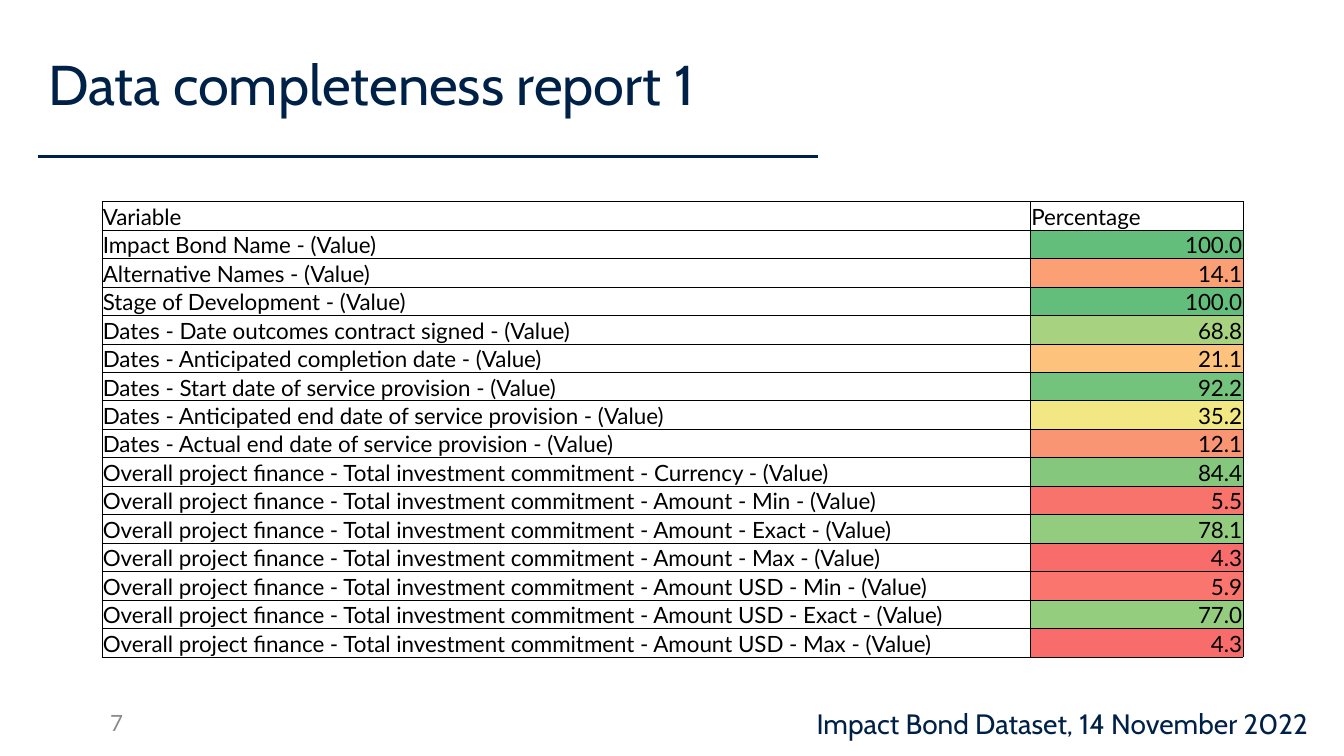
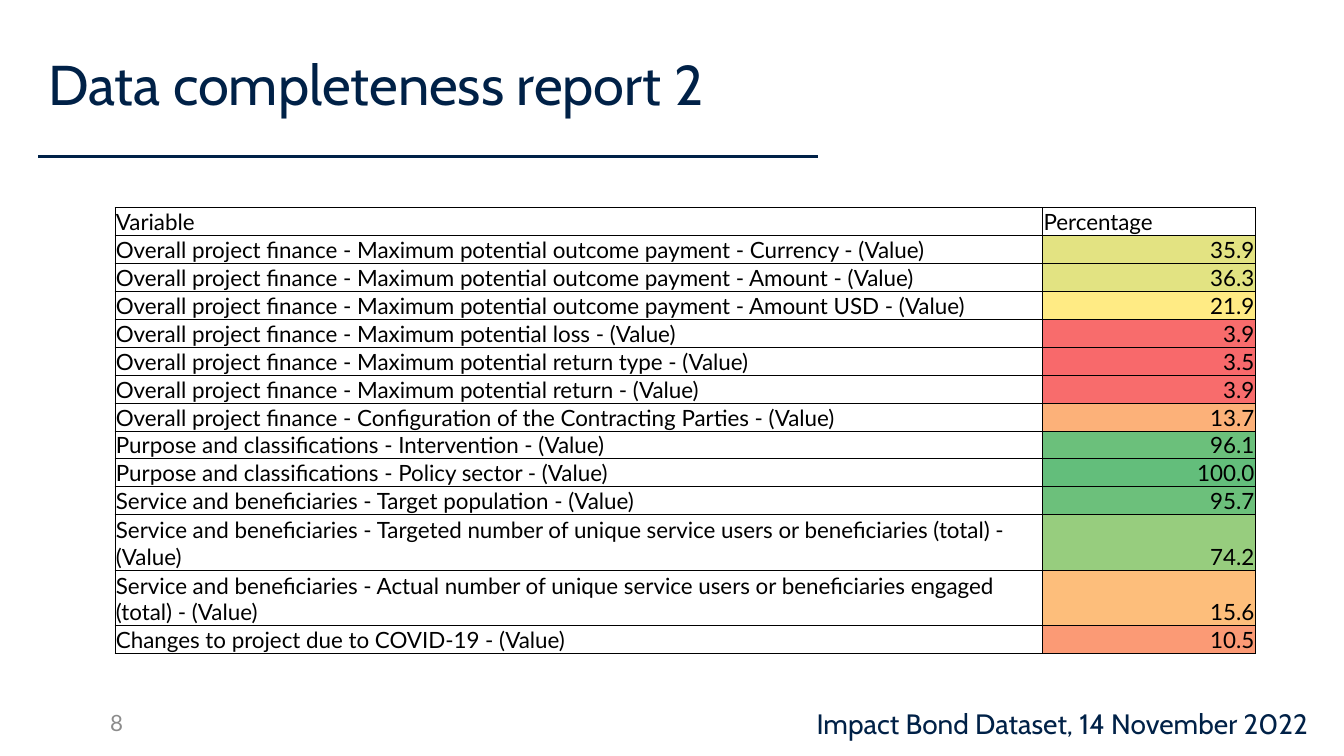
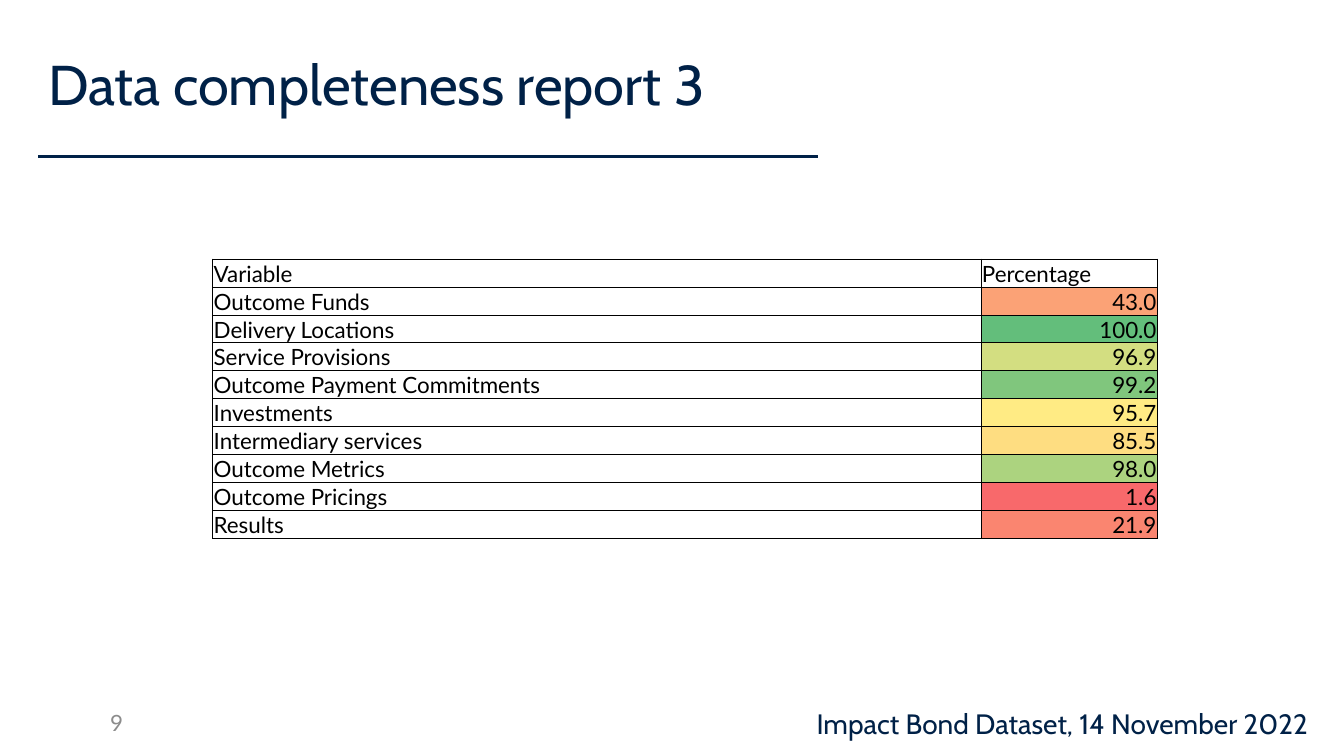
from dataclasses import dataclass

import lxml.etree
import pptx
import pptx.dml.color
import pptx.enum.shapes
import pptx.enum.text
import pptx.oxml.ns
import pptx.util

Inches = pptx.util.Inches
Pt = pptx.util.Pt
ALIGN = pptx.enum.text.PP_ALIGN
ANCHOR = pptx.enum.text.MSO_ANCHOR
qn = pptx.oxml.ns.qn

COLOURS = {
    "navy": "002147", "grey": "8C8C8C", "black": "000000",
    "low": "F8696B", "middle": "FFEB84", "high": "63BE7B",
}
HEADING_FONT = "Cabin"
BODY_FONT = "Lato"
FOOTER = "Impact Bond Dataset, 14 November 2022"
FIRST_PAGE = 7


@dataclass
class Measure:
    variable: str
    percentage: float
    lines: int = 1


@dataclass
class Scale:
    """Percentages that take the low, middle and high colours."""
    low: float
    middle: float
    high: float = 100.0


@dataclass
class Report:
    left: float
    top: float
    height: float
    columns: tuple[float, float]
    scale: Scale
    measures: list[Measure]


INVESTMENT = "Overall project finance - Total investment commitment"
FINANCE = "Overall project finance - Maximum potential"
SERVICE = "Service and beneficiaries -"

REPORTS = [
    Report(1.01, 2, 4.52, (9.21, 2.11), Scale(3.5, 28.9), [
        Measure("Impact Bond Name - (Value)", 100.0),
        Measure("Alternative Names - (Value)", 14.1),
        Measure("Stage of Development - (Value)", 100.0),
        Measure("Dates - Date outcomes contract signed - (Value)", 68.8),
        Measure("Dates - Anticipated completion date - (Value)", 21.1),
        Measure("Dates - Start date of service provision - (Value)", 92.2),
        Measure("Dates - Anticipated end date of service provision - (Value)", 35.2),
        Measure("Dates - Actual end date of service provision - (Value)", 12.1),
        Measure(f"{INVESTMENT} - Currency - (Value)", 84.4),
        Measure(f"{INVESTMENT} - Amount - Min - (Value)", 5.5),
        Measure(f"{INVESTMENT} - Amount - Exact - (Value)", 78.1),
        Measure(f"{INVESTMENT} - Amount - Max - (Value)", 4.3),
        Measure(f"{INVESTMENT} - Amount USD - Min - (Value)", 5.9),
        Measure(f"{INVESTMENT} - Amount USD - Exact - (Value)", 77.0),
        Measure(f"{INVESTMENT} - Amount USD - Max - (Value)", 4.3),
    ]),
    Report(1.14, 2.06, 4.41, (9.2, 2.11), Scale(3.5, 21.9), [
        Measure(f"{FINANCE} outcome payment - Currency - (Value)", 35.9),
        Measure(f"{FINANCE} outcome payment - Amount - (Value)", 36.3),
        Measure(f"{FINANCE} outcome payment - Amount USD - (Value)", 21.9),
        Measure(f"{FINANCE} loss - (Value)", 3.9),
        Measure(f"{FINANCE} return type - (Value)", 3.5),
        Measure(f"{FINANCE} return - (Value)", 3.9),
        Measure("Overall project finance - Configuration of the Contracting Parties"
                " - (Value)", 13.7),
        Measure("Purpose and classifications - Intervention - (Value)", 96.1),
        Measure("Purpose and classifications - Policy sector - (Value)", 100.0),
        Measure(f"{SERVICE} Target population - (Value)", 95.7),
        Measure(f"{SERVICE} Targeted number of unique service users or beneficiaries"
                " (total) - (Value)", 74.2, 2),
        Measure(f"{SERVICE} Actual number of unique service users or beneficiaries"
                " engaged (total) - (Value)", 15.6, 2),
        Measure("Changes to project due to COVID-19 - (Value)", 10.5),
    ]),
    Report(2.11, 2.57, 2.77, (7.62, 1.75), Scale(1.6, 95.7), [
        Measure("Outcome Funds", 43.0),
        Measure("Delivery Locations", 100.0),
        Measure("Service Provisions", 96.9),
        Measure("Outcome Payment Commitments", 99.2),
        Measure("Investments", 95.7),
        Measure("Intermediary services", 85.5),
        Measure("Outcome Metrics", 98.0),
        Measure("Outcome Pricings", 1.6),
        Measure("Results", 21.9),
    ]),
]


def rgb(name: str) -> pptx.dml.color.RGBColor:
    return pptx.dml.color.RGBColor.from_string(COLOURS[name])


def heat_colour(value: float, scale: Scale) -> pptx.dml.color.RGBColor:
    """Blend the two scale colours on either side of the value."""
    if value <= scale.middle:
        start, end = rgb("low"), rgb("middle")
        share = (value - scale.low) / (scale.middle - scale.low)
    else:
        start, end = rgb("middle"), rgb("high")
        share = (value - scale.middle) / (scale.high - scale.middle)
    return pptx.dml.color.RGBColor(
        *(round(a + (b - a) * share) for a, b in zip(start, end)))


def write(frame, text: str, font: str, size: float, colour: str,
          align=ALIGN.LEFT) -> None:
    paragraph = frame.paragraphs[0]
    paragraph.alignment = align
    run = paragraph.add_run()
    run.text = text
    run.font.name = font
    run.font.size = Pt(size)
    run.font.bold = False
    run.font.color.rgb = rgb(colour)


def add_label(slide, box: tuple[float, float, float, float], text: str,
              font: str, size: float, colour: str, align=ALIGN.LEFT) -> None:
    frame = slide.shapes.add_textbox(*map(Inches, box)).text_frame
    frame.word_wrap = True
    frame.vertical_anchor = ANCHOR.MIDDLE
    write(frame, text, font, size, colour, align)


def add_page(presentation, number: int, page: int):
    """Add a slide with its title, rule, page number and footer."""
    slide = presentation.slides.add_slide(presentation.slide_layouts[5])

    # Title
    title = slide.shapes.title
    title.left, title.top = Inches(0.38), Inches(0.1)
    title.width, title.height = Inches(7.98), Inches(1.45)
    title.text_frame.auto_size = pptx.enum.text.MSO_AUTO_SIZE.NONE
    title.text_frame.vertical_anchor = ANCHOR.MIDDLE
    write(title.text_frame, f"Data completeness report {number}",
          HEADING_FONT, 40, "navy")

    # Rule below the title
    rule = slide.shapes.add_connector(
        pptx.enum.shapes.MSO_CONNECTOR.STRAIGHT,
        Inches(0.38), Inches(1.55), Inches(8.11), Inches(1.55))
    rule.line.color.rgb = rgb("navy")
    rule.line.width = Pt(2)
    lxml.etree.SubElement(rule._element.spPr, qn("a:effectLst"))

    # Page number and footer
    add_label(slide, (0.67, 6.97, 0.65, 0.4), str(page),
              BODY_FONT, 16, "grey", ALIGN.RIGHT)
    add_label(slide, (8, 6.9, 5.25, 0.55), FOOTER, HEADING_FONT, 20, "navy")
    return slide


def add_borders(cell) -> None:
    properties = cell._tc.get_or_add_tcPr()
    for side in ("lnL", "lnR", "lnT", "lnB"):
        line = lxml.etree.SubElement(properties, qn(f"a:{side}"), w=str(Pt(0.5)))
        fill = lxml.etree.SubElement(line, qn("a:solidFill"))
        lxml.etree.SubElement(fill, qn("a:srgbClr"), val=COLOURS["black"])


def fill_cell(cell, text: str, align=ALIGN.LEFT, colour=None) -> None:
    cell.margin_left = cell.margin_right = cell.margin_top = Inches(0.01)
    cell.margin_bottom = 0
    cell.vertical_anchor = ANCHOR.BOTTOM
    add_borders(cell)
    if colour is None:
        cell.fill.background()
    else:
        cell.fill.solid()
        cell.fill.fore_color.rgb = colour
    write(cell.text_frame, text, BODY_FONT, 16, "black", align)


def add_report_table(slide, report: Report) -> None:
    table = slide.shapes.add_table(
        len(report.measures) + 1, len(report.columns),
        Inches(report.left), Inches(report.top),
        Inches(sum(report.columns)), Inches(report.height)).table
    table.first_row = table.horz_banding = False
    for column, width in zip(table.columns, report.columns):
        column.width = Inches(width)

    # Row heights follow the number of text lines
    line_counts = [1] + [measure.lines for measure in report.measures]
    for row, lines in zip(table.rows, line_counts):
        row.height = Inches(report.height * lines / sum(line_counts))

    fill_cell(table.cell(0, 0), "Variable")
    fill_cell(table.cell(0, 1), "Percentage")
    for index, measure in enumerate(report.measures, start=1):
        fill_cell(table.cell(index, 0), measure.variable)
        fill_cell(table.cell(index, 1), f"{measure.percentage:.1f}", ALIGN.RIGHT,
                  heat_colour(measure.percentage, report.scale))


def main() -> None:
    presentation = pptx.Presentation()
    presentation.slide_width = Inches(13.33)
    presentation.slide_height = Inches(7.5)
    for index, report in enumerate(REPORTS):
        slide = add_page(presentation, index + 1, FIRST_PAGE + index)
        add_report_table(slide, report)
    presentation.save("out.pptx")


if __name__ == "__main__":
    main()
